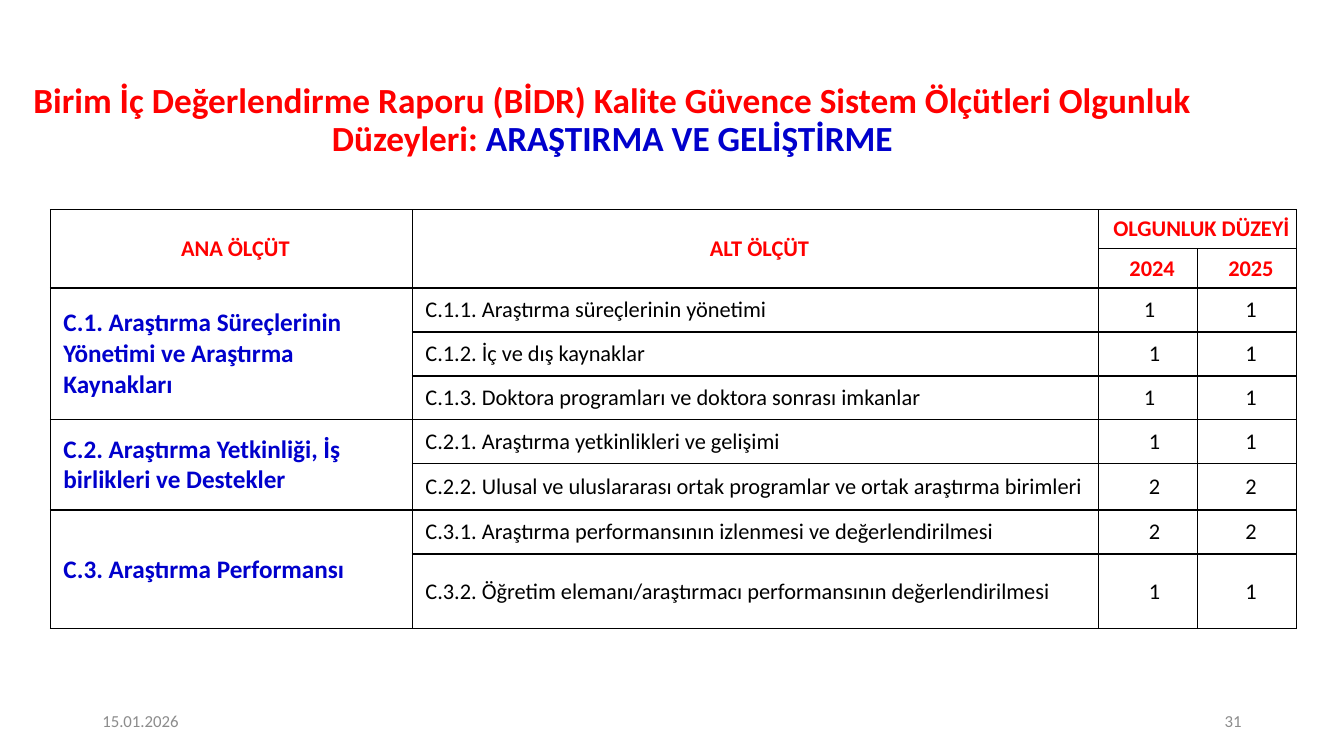
from lxml import etree
from pptx import Presentation
from pptx import util as u
from pptx.dml import color
from pptx.enum import text
from pptx.oxml import ns

Pt = u.Pt
FONT = "Calibri"
COLORS = {"red": "FF0000", "blue": "0000CC", "black": "000000", "grey": "8C8C8C"}
TITLE = [
    ("Birim İç Değerlendirme Raporu (BİDR) Kalite Güvence Sistem Ölçütleri Olgunluk Düzeyleri: ", "red"),
    ("ARAŞTIRMA VE GELİŞTİRME", "blue"),
]
DATE, PAGE = "15.01.2026", "31"
HEADINGS = ["ANA ÖLÇÜT", "ALT ÖLÇÜT", "OLGUNLUK DÜZEYİ"]
YEARS = ["2024", "2025"]
CRITERIA = [
    ("C.1. Araştırma Süreçlerinin Yönetimi ve Araştırma Kaynakları", [
        ("C.1.1. Araştırma süreçlerinin yönetimi", "1", "1", "left"),
        ("C.1.2. İç ve dış kaynaklar", "1", "1", "right"),
        ("C.1.3. Doktora programları ve doktora sonrası imkanlar", "1", "1", "left"),
    ]),
    ("C.2. Araştırma Yetkinliği, İş birlikleri ve Destekler", [
        ("C.2.1. Araştırma yetkinlikleri ve gelişimi", "1", "1", "right"),
        ("C.2.2. Ulusal ve uluslararası ortak programlar ve ortak araştırma birimleri", "2", "2", "right"),
    ]),
    ("C.3. Araştırma Performansı", [
        ("C.3.1. Araştırma performansının izlenmesi ve değerlendirilmesi", "2", "2", "right"),
        ("C.3.2. Öğretim elemanı/araştırmacı performansının değerlendirilmesi", "1", "1", "right"),
    ]),
]
COLUMN_WIDTHS = [258.5, 490.3, 70.6, 70.6]
ROW_HEIGHTS = [28, 28] + [31.4] * 4 + [33, 31.4, 53.5]
INDENT, NUDGE = 5.76, 3.6
LEFT, CENTER, RIGHT = text.PP_ALIGN.LEFT, text.PP_ALIGN.CENTER, text.PP_ALIGN.RIGHT


def add_run(paragraph, words, size, tone, bold=False):
    run = paragraph.add_run()
    run.text = words
    run.font.name = FONT
    run.font.size = Pt(size)
    run.font.bold = bold
    run.font.color.rgb = color.RGBColor.from_string(COLORS[tone])


def add_line(slide, place, runs, size, align, bold=False):
    frame = slide.shapes.add_textbox(*map(Pt, place)).text_frame
    frame.word_wrap = True
    frame.vertical_anchor = text.MSO_ANCHOR.MIDDLE
    paragraph = frame.paragraphs[0]
    paragraph.alignment = align
    for words, tone in runs:
        add_run(paragraph, words, size, tone, bold)
    return paragraph


def style_cell(cell):
    cell.margin_left = cell.margin_right = Pt(3.6)
    cell.margin_top = cell.margin_bottom = 0
    cell.vertical_anchor = text.MSO_ANCHOR.MIDDLE
    properties = cell._tc.get_or_add_tcPr()
    for side in ("a:lnL", "a:lnR", "a:lnT", "a:lnB"):
        border = etree.SubElement(properties, ns.qn(side), w=str(Pt(1)))
        fill = etree.SubElement(border, ns.qn("a:solidFill"))
        etree.SubElement(fill, ns.qn("a:srgbClr"), val=COLORS["black"])
    cell.fill.background()


def write_cell(cell, words, size, tone, bold=False, align=CENTER, nudge=None):
    paragraph = cell.text_frame.paragraphs[0]
    paragraph.alignment = align
    margins = paragraph._p.get_or_add_pPr()
    margins.set("marL", str(Pt(INDENT + (NUDGE if nudge == "right" else 0))))
    margins.set("marR", str(Pt(NUDGE if nudge == "left" else 0)))
    margins.set("indent", "0")
    add_run(paragraph, words, size, tone, bold)


def add_criteria(slide):
    table = slide.shapes.add_table(
        len(ROW_HEIGHTS), len(COLUMN_WIDTHS), Pt(36), Pt(149.8),
        Pt(sum(COLUMN_WIDTHS)), Pt(sum(ROW_HEIGHTS))).table
    table.first_row = table.horz_banding = False
    for column, width in zip(table.columns, COLUMN_WIDTHS):
        column.width = Pt(width)
    for row, height in zip(table.rows, ROW_HEIGHTS):
        row.height = Pt(height)
    for cell in table.iter_cells():
        style_cell(cell)

    for index, heading in enumerate(HEADINGS):
        end = (0, 3) if index == 2 else (1, index)
        table.cell(0, index).merge(table.cell(*end))
        write_cell(table.cell(0, index), heading, 16, "red", True)
    for index, year in enumerate(YEARS, 2):
        write_cell(table.cell(1, index), year, 16, "red", True)

    top = 2
    for main, subs in CRITERIA:
        table.cell(top, 0).merge(table.cell(top + len(subs) - 1, 0))
        write_cell(table.cell(top, 0), main, 18, "blue", True, LEFT)
        for row, (sub, before, after, nudge) in enumerate(subs, top):
            write_cell(table.cell(row, 1), sub, 16, "black", align=LEFT)
            write_cell(table.cell(row, 2), before, 16, "black", nudge=nudge)
            write_cell(table.cell(row, 3), after, 16, "black")
        top += len(subs)


def main():
    deck = Presentation()
    deck.slide_width, deck.slide_height = Pt(960), Pt(540)
    slide = deck.slides.add_slide(deck.slide_layouts[6])
    title = add_line(slide, (16.6, 57.6, 841.7, 57.6), TITLE, 25.2, CENTER, True)
    title.line_spacing = 0.9
    add_line(slide, (66, 500.5, 216, 28.8), [(DATE, "grey")], 12, LEFT)
    add_line(slide, (678, 500.5, 216, 28.8), [(PAGE, "grey")], 12, RIGHT)
    add_criteria(slide)
    deck.save("out.pptx")


if __name__ == "__main__":
    main()
